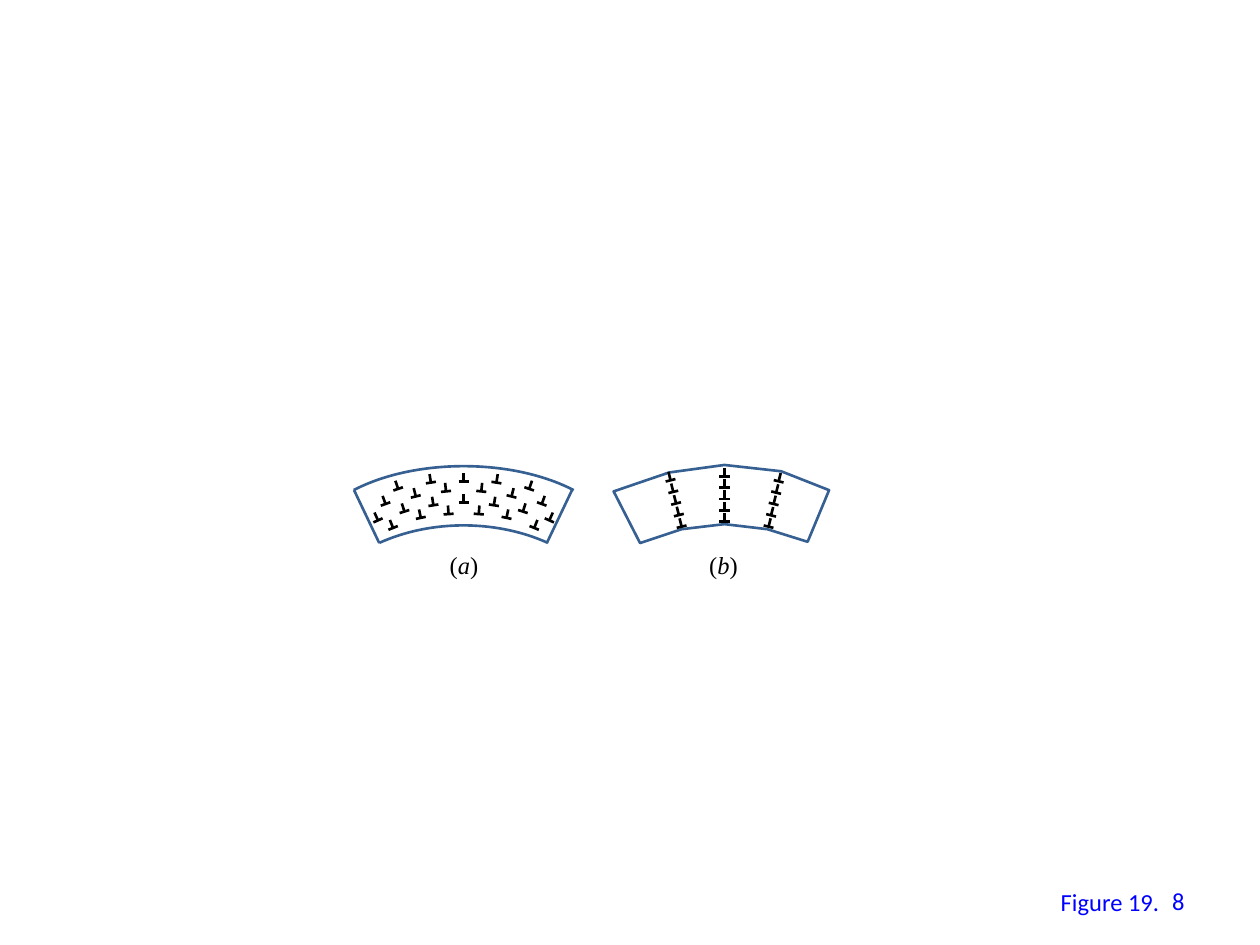
from dataclasses import dataclass
from math import cos, radians, sin

from lxml.etree import SubElement
from pptx import Presentation
from pptx.dml.color import RGBColor
from pptx.enum.shapes import MSO_CONNECTOR as Connector, MSO_SHAPE as Shape
from pptx.enum.text import MSO_ANCHOR as Anchor, PP_ALIGN as Align
from pptx.oxml.ns import qn
from pptx.util import Inches, Pt

WIDTH, HEIGHT = Inches(10), Inches(7.5)
COLUMNS, ROWS = 100, 75


@dataclass(frozen=True)
class Theme:
    outline: RGBColor = RGBColor(0x37, 0x60, 0x92)
    ink: RGBColor = RGBColor(0, 0, 0)
    footer: RGBColor = RGBColor(0, 0, 0xFF)
    caption_font: str = "Times New Roman"
    footer_font: str = "Calibri"
    text_size: Pt = Pt(14)
    line_width: Pt = Pt(1.5)


THEME = Theme()

FOOT, STEM = 0.8, 0.68
BEAM_CENTER = 36.8
CENTER_MARK_ROWS = (38.2, 39.9)
MIRRORED_MARKS = (
    (1.2, 40.8, 4), (1.4, 39, 6), (2.6, 38.3, 9), (2.4, 40.1, 9),
    (3.8, 39.4, 14), (3.4, 41.1, 12), (5.2, 38.8, 19), (4.7, 40.6, 18),
    (6.2, 40, 20), (5.6, 41.9, 22), (6.8, 41.3, 24),
)
BENT_OUTLINE = (
    (48.7, 39), (53.1, 37.5), (57.5, 36.9), (62, 37.4), (65.8, 38.9),
    (64.1, 43), (60.9, 42), (57.5, 41.6), (54.1, 42), (50.8, 43.1),
)
WALLS = ((57.5, 41.4, 0, 0.9, 0), (61, 41.8, 0.2, 0.9, 14),
         (54.1, 41.8, -0.22, 0.92, -14))
MARKS_PER_WALL = 5


def column(count):
    return round(WIDTH * count / COLUMNS)


def row(count):
    return round(HEIGHT * count / ROWS)


def box(left, top, width, height):
    return column(left), row(top), column(width), row(height)


def style_line(line, color):
    line.color.rgb = color
    line.width = THEME.line_width


def add_line(shapes, start, end, color):
    connector = shapes.add_connector(
        Connector.STRAIGHT, column(start[0]), row(start[1]),
        column(end[0]), row(end[1]))
    style_line(connector.line, color)
    SubElement(connector._element.spPr, qn("a:effectLst"))


def add_dislocation(shapes, x, y, tilt):
    across, down = cos(radians(tilt)), sin(radians(tilt))
    half = FOOT / 2
    add_line(shapes, (x - half * across, y - half * down),
             (x + half * across, y + half * down), THEME.ink)
    add_line(shapes, (x, y), (x + STEM * down, y - STEM * across), THEME.ink)


def add_arc(shapes, area, start_degrees, end_degrees):
    arc = shapes.add_shape(Shape.ARC, *box(*area))
    arc.adjustments[0] = start_degrees * 0.6
    arc.adjustments[1] = end_degrees * 0.6
    arc.shadow.inherit = False
    arc.fill.background()
    style_line(arc.line, THEME.outline)


def add_outline(shapes, points):
    corners = [(column(x), row(y)) for x, y in points]
    builder = shapes.build_freeform(*corners[0], scale=1.0)
    builder.add_line_segments(corners[1:], close=True)
    outline = builder.convert_to_shape()
    outline.shadow.inherit = False
    outline.fill.background()
    style_line(outline.line, THEME.outline)


def add_text(shapes, area, text, *, font, color, italic=(), wrap=False,
             align=Align.LEFT, anchor=Anchor.TOP):
    frame = shapes.add_textbox(*box(*area)).text_frame
    frame.word_wrap = wrap
    frame.vertical_anchor = anchor
    paragraph = frame.paragraphs[0]
    paragraph.alignment = align
    pieces = text if isinstance(text, tuple) else (text,)
    for piece in pieces:
        run = paragraph.add_run()
        run.text = piece
        run.font.name = font
        run.font.size = THEME.text_size
        run.font.color.rgb = color
        run.font.italic = piece in italic


def add_curved_beam(shapes):
    add_arc(shapes, (24.3, 37, 25, 13.4), 208.84, 331.25)
    add_arc(shapes, (24.3, 41.7, 25, 17.9), 228.5, 311.48)
    group = shapes.add_group_shape().shapes
    add_line(group, (28.1, 38.9), (30.1, 43.1), THEME.outline)
    add_line(group, (43.4, 43.1), (45.4, 38.9), THEME.outline)
    for y in CENTER_MARK_ROWS:
        add_dislocation(group, BEAM_CENTER, y, 0)
    for offset, y, tilt in MIRRORED_MARKS:
        for side in (-1, 1):
            add_dislocation(group, BEAM_CENTER + side * offset, y, side * tilt)


def add_polygonized_beam(shapes):
    group = shapes.add_group_shape().shapes
    add_outline(group, BENT_OUTLINE)
    for x, y, shift, rise, tilt in WALLS:
        for index in range(MARKS_PER_WALL):
            add_dislocation(group, x + index * shift, y - index * rise, tilt)


def main():
    presentation = Presentation()
    presentation.slide_width, presentation.slide_height = WIDTH, HEIGHT
    slide = presentation.slides.add_slide(presentation.slide_layouts[6])
    shapes = slide.shapes
    add_text(shapes, (83.2, 69.9, 9.9, 3.4), "Figure 19.",
             font=THEME.footer_font, color=THEME.footer)
    add_polygonized_beam(shapes)
    for left, letter in ((34.7, "a"), (55.3, "b")):
        add_text(shapes, (left, 43.2, 4.3, 3.4), ("(", letter, ")"),
                 font=THEME.caption_font, color=THEME.ink, italic=(letter,))
    add_curved_beam(shapes)
    add_text(shapes, (71.7, 69.5, 23.3, 4), "8", font=THEME.footer_font,
             color=THEME.footer, wrap=True, align=Align.RIGHT,
             anchor=Anchor.MIDDLE)
    presentation.save("out.pptx")


if __name__ == "__main__":
    main()
